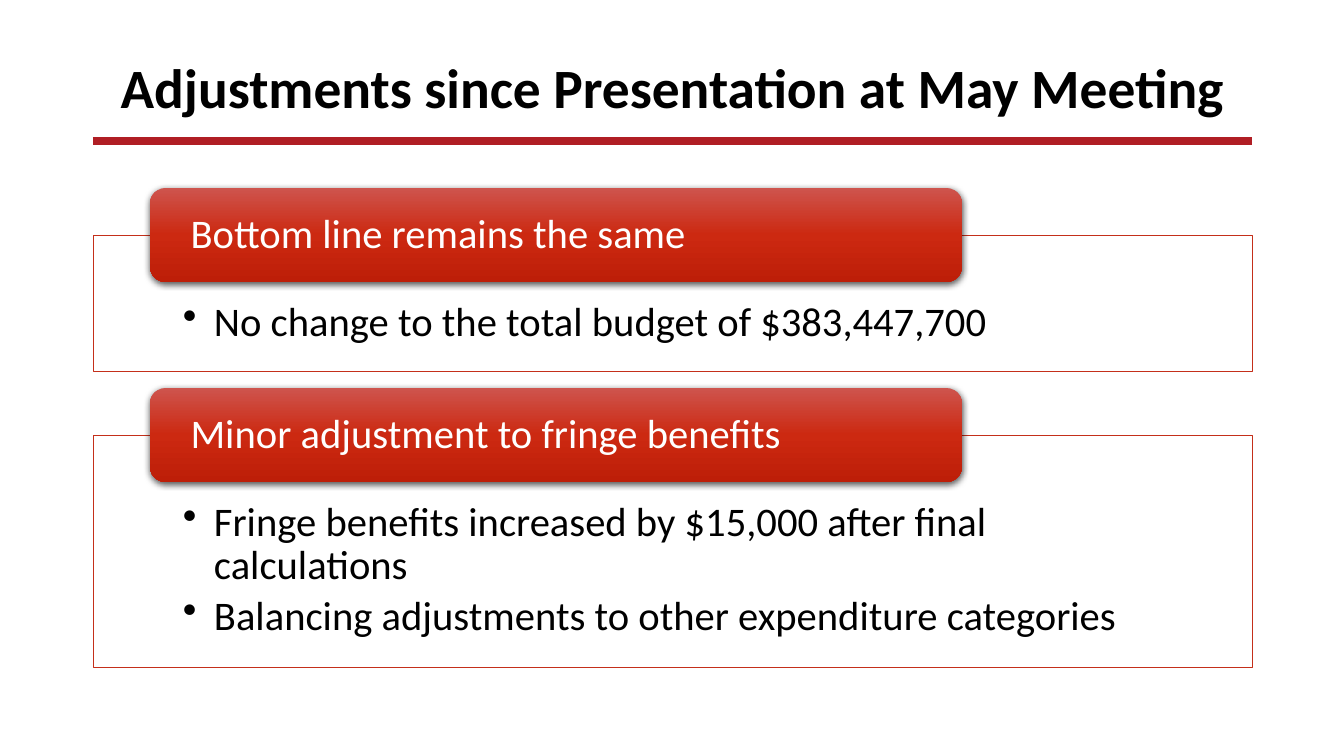
from copy import deepcopy

from pptx import Presentation
from pptx import util as u
from pptx.dml.color import RGBColor
from pptx.enum import shapes, text
from pptx.oxml import parse_xml
from pptx.oxml.ns import nsdecls, qn

BLACK = RGBColor(0x00, 0x00, 0x00)
WHITE = RGBColor(0xFF, 0xFF, 0xFF)
RULE_RED = RGBColor(0xB0, 0x1E, 0x24)
BORDER_RED = RGBColor(0xC4, 0x2F, 0x1A)
TAB_REDS = [RGBColor(0xCE, 0x54, 0x4D), RGBColor(0xCC, 0x29, 0x11), RGBColor(0xBD, 0x1E, 0x08)]

LEFT, WIDTH = 93, 1159
TAB_LEFT, TAB_WIDTH, TAB_HEIGHT = 150, 812, 94

# Heading, top and height of the panel, bullets
SECTIONS = [
    ("Bottom line remains the same", 235, 136,
     ["No change to the total budget of $383,447,700"]),
    ("Minor adjustment to fringe benefits", 435, 232,
     ["Fringe benefits increased by $15,000 after final calculations",
      "Balancing adjustments to other expenditure categories"]),
]


def px(*lengths):
    return [u.Emu(round(n * 914400 / 100.8)) for n in lengths]


def fill_text(tf, lines, size, color, margins, anchor):
    tf.word_wrap = True
    tf.vertical_anchor = anchor
    tf.margin_left, tf.margin_top, tf.margin_right, tf.margin_bottom = px(*margins)
    tf.text = "\n".join(lines)
    for p in tf.paragraphs:
        p.alignment = text.PP_ALIGN.LEFT
        p.line_spacing = 0.9
        for r in p.runs:
            r.font.name = "Calibri"
            r.font.size = u.Pt(size)
            r.font.color.rgb = color


prs = Presentation()
prs.slide_width, prs.slide_height = px(1344, 756)
s = prs.slides.add_slide(prs.slide_layouts[5])

# Title
title = s.shapes.title
title.left, title.top, title.width, title.height = px(LEFT, 40, WIDTH, 101)
fill_text(title.text_frame, ["Adjustments since Presentation at May Meeting"], 39.6, BLACK,
          (10, 5, 10, 5), text.MSO_ANCHOR.MIDDLE)
p = title.text_frame.paragraphs[0]
p.alignment = text.PP_ALIGN.CENTER
p.runs[0].font.bold = True

# Rule under the title
rule = s.shapes.add_connector(shapes.MSO_CONNECTOR.STRAIGHT, *px(LEFT, 141, LEFT + WIDTH, 141))
rule.line.color.rgb = RULE_RED
rule.line.width = u.Pt(6)
rule._element.spPr.append(parse_xml(f"<a:effectLst {nsdecls('a')}/>"))

for heading, top, height, bullets in SECTIONS:
    # Bordered panel with bullets
    panel = s.shapes.add_shape(shapes.MSO_SHAPE.RECTANGLE, *px(LEFT, top, WIDTH, height))
    panel.shadow.inherit = False
    panel.fill.solid()
    panel.fill.fore_color.rgb = WHITE
    panel.line.color.rgb = BORDER_RED
    panel.line.width = u.Pt(0.5)
    fill_text(panel.text_frame, bullets, 29, BLACK, (90, 66, 90, 23), text.MSO_ANCHOR.TOP)
    indent, = px(31)
    for p in panel.text_frame.paragraphs:
        p.space_after = u.Pt(5)
        pPr = p._p.get_or_add_pPr()
        pPr.set("marL", str(indent))
        pPr.set("indent", str(-indent))
        pPr.append(parse_xml(f'<a:buChar {nsdecls("a")} char="•"/>'))

    # Heading tab centred on the panel's top edge
    tab = s.shapes.add_shape(shapes.MSO_SHAPE.ROUNDED_RECTANGLE,
                             *px(TAB_LEFT, top - TAB_HEIGHT // 2, TAB_WIDTH, TAB_HEIGHT))
    tab.line.fill.background()
    fill_text(tab.text_frame, [heading], 29, WHITE, (36, 0, 36, 0), text.MSO_ANCHOR.MIDDLE)

    # Three-stop gradient from top to bottom
    tab.fill.gradient()
    tab.fill.gradient_angle = 270
    stops = tab._element.spPr.find(".//" + qn("a:gsLst"))
    stops.append(deepcopy(stops[0]))
    for i, (stop, color) in enumerate(zip(tab.fill.gradient_stops, TAB_REDS)):
        stop.position = i / 2
        stop.color.rgb = color

    # Soft shadow below the tab
    tab.shadow.inherit = False
    tab._element.spPr.find(qn("a:effectLst")).append(parse_xml(
        f'<a:outerShdw {nsdecls("a")} blurRad="{u.Pt(4.5)}" dist="{u.Pt(1.5)}" dir="5400000" '
        'rotWithShape="0"><a:srgbClr val="000000"><a:alpha val="63000"/></a:srgbClr></a:outerShdw>'))

prs.save("out.pptx")
